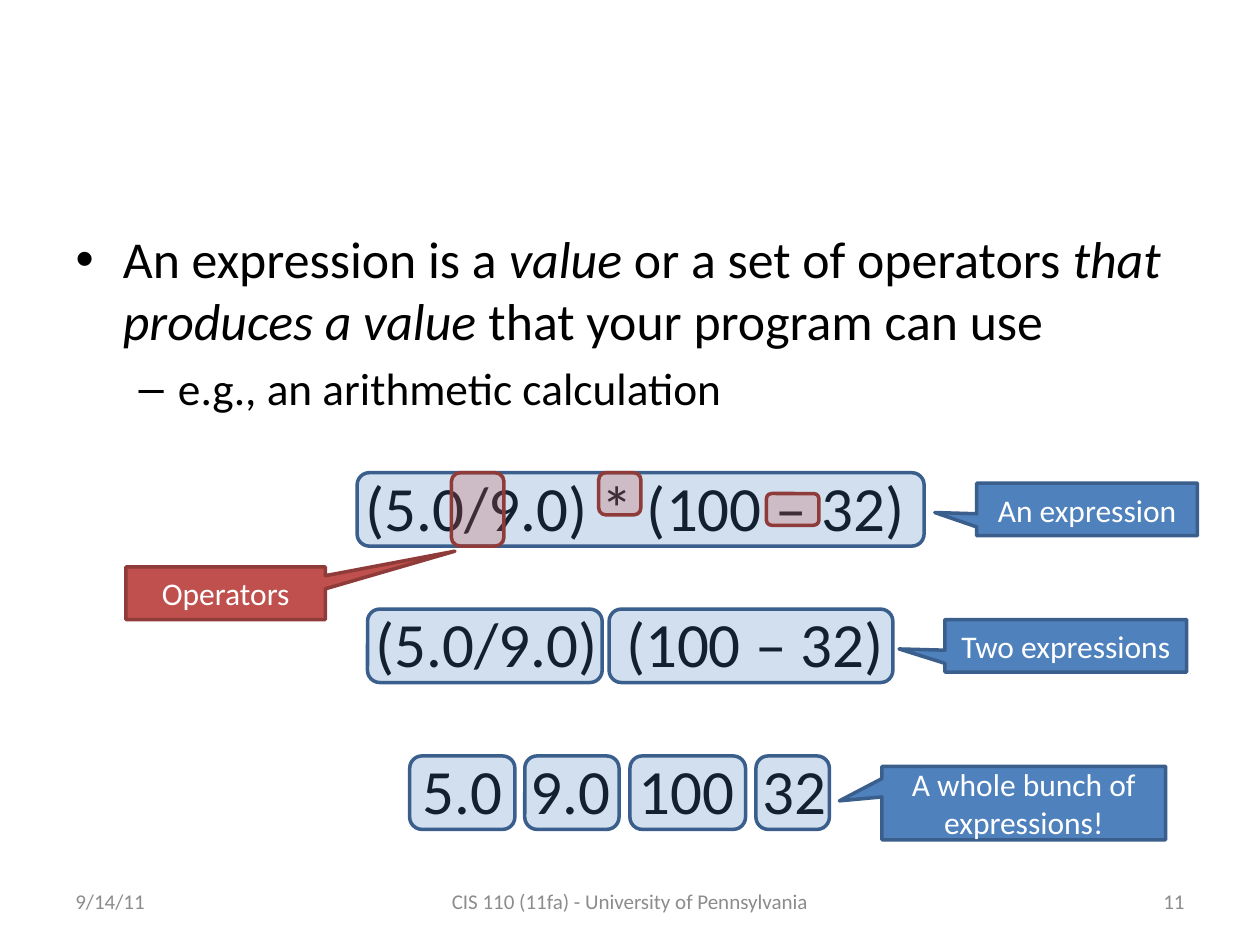
from lxml import etree
from pptx import Presentation
from pptx.dml.color import RGBColor
from pptx.enum.shapes import MSO_SHAPE
from pptx.enum.text import MSO_ANCHOR, MSO_AUTO_SIZE, PP_ALIGN
from pptx.oxml.ns import qn
from pptx.util import Cm, Pt

ROUNDED = MSO_SHAPE.ROUNDED_RECTANGLE
CALLOUT = MSO_SHAPE.RECTANGULAR_CALLOUT
MIDDLE, TOP = MSO_ANCHOR.MIDDLE, MSO_ANCHOR.TOP
LEFT, CENTER, RIGHT = PP_ALIGN.LEFT, PP_ALIGN.CENTER, PP_ALIGN.RIGHT
NO_AUTOFIT = MSO_AUTO_SIZE.NONE

BLUE = {"fill": "4F81BD", "line": "3A5F8C"}
RED = {"fill": "C0504D", "line": "8E3B39"}
BOX_HEIGHT = 1.48


def write(shape, text, size, color, align=CENTER, anchor=MIDDLE):
    frame = shape.text_frame
    for name, value in {"word_wrap": True, "vertical_anchor": anchor}.items():
        setattr(frame, name, value)
    paragraph = frame.paragraphs[0]
    paragraph.alignment = align
    run = paragraph.add_run()
    run.text = text
    for name, value in {"name": "Calibri", "size": Pt(size)}.items():
        setattr(run.font, name, value)
    run.font.color.rgb = RGBColor.from_string(color)


def add_box(kind, place, colors, alpha=None):
    shape = slide.shapes.add_shape(kind, *[Cm(length) for length in place])
    shape.shadow.inherit = False
    shape.fill.solid()
    shape.fill.fore_color.rgb = RGBColor.from_string(colors["fill"])
    shape.line.color.rgb = RGBColor.from_string(colors["line"])
    shape.line.width = Pt(2)
    if alpha:
        fill_color = shape._element.spPr.find(qn("a:solidFill"))[0]
        etree.SubElement(fill_color, qn("a:alpha")).set("val", str(alpha * 1000))
    return shape


presentation = Presentation()
presentation.slide_width, presentation.slide_height = Cm(25.4), Cm(19.05)
slide = presentation.slides.add_slide(presentation.slide_layouts[1])

# The slide shows no title
title = slide.shapes.title
title._element.getparent().remove(title._element)

# Definition, with the bullets of the body placeholder
body = slide.placeholders[1]
body_format = {"left": Cm(1.27), "top": Cm(4.45), "width": Cm(22.86), "height": Cm(4.65)}
for name, value in body_format.items():
    setattr(body, name, value)
body.text_frame.auto_size = NO_AUTOFIT
definition = [
    (0, 29.6, [("An expression is a ", False), ("value", True),
               (" or a set of operators ", False), ("that produces a value", True),
               (" that your program can use", False)]),
    (1, 25.9, [("e.g., an arithmetic calculation", False)]),
]
for index, (level, size, pieces) in enumerate(definition):
    frame = body.text_frame
    paragraph = frame.add_paragraph() if index else frame.paragraphs[0]
    paragraph.level = level
    for text, italic in pieces:
        run = paragraph.add_run()
        run.text = text
        run_format = {"name": "Calibri", "size": Pt(size), "italic": italic}
        for name, value in run_format.items():
            setattr(run.font, name, value)
        run.font.color.rgb = RGBColor.from_string("000000")

# Date, footer and slide number
footers = [
    (1.27, 5.93, "9/14/11", LEFT),
    (8.68, 8.04, "CIS 110 (11fa) - University of Pennsylvania", CENTER),
    (18.2, 5.93, "11", RIGHT),
]
for left, width, text, align in footers:
    footer = slide.shapes.add_textbox(Cm(left), Cm(17.66), Cm(width), Cm(1.01))
    write(footer, text, 12, "8C8C8C", align)

# Expression rows: text position, then left and width of each box around it
rows = [
    (1.48, 22.65, 9.53, "(5.0/9.0) * (100 – 32)", [(7.2, 11.43)]),
    (1.27, 22.86, 12.28, "(5.0/9.0)  (100 – 32)", [(7.41, 4.73), (12.28, 5.72)]),
    (1.27, 22.65, 15.24, "5.0  9.0  100  32",
     [(8.26, 2.12), (10.58, 1.9), (12.7, 2.33), (15.24, 1.48)]),
]
for left, width, top, text, boxes in rows:
    expression = slide.shapes.add_textbox(Cm(left), Cm(top - 0.21), Cm(width), Cm(1.9))
    write(expression, text, 36, "000000", anchor=TOP)
    for box_left, box_width in boxes:
        add_box(ROUNDED, (box_left, top, box_width, BOX_HEIGHT), BLUE, alpha=25)

# Operator highlights
operators = [
    (9.1, 9.53, 1.06, BOX_HEIGHT),
    (12.07, 9.53, 0.85, 0.85),
    (15.45, 9.95, 1.06, 0.64),
]
for place in operators:
    add_box(ROUNDED, place, RED, alpha=25)

# Callouts, with the tip of each pointer relative to its centre
callouts = [
    ("An expression", (19.69, 9.74, 4.45, 1.06), (-0.69, 0.06), BLUE),
    ("Two expressions", (19.05, 12.49, 4.87, 1.06), (-0.69, 0.06), BLUE),
    ("A whole bunch of expressions!", (17.78, 15.45, 5.72, 1.48), (-0.65, -0.03), BLUE),
    ("Operators", (2.54, 11.43, 4.02, 1.06), (1.15, -0.8), RED),
]
for text, place, tip, colors in callouts:
    callout = add_box(CALLOUT, place, colors)
    callout.adjustments[0], callout.adjustments[1] = tip
    write(callout, text, 18, "FFFFFF")

presentation.save("out.pptx")
